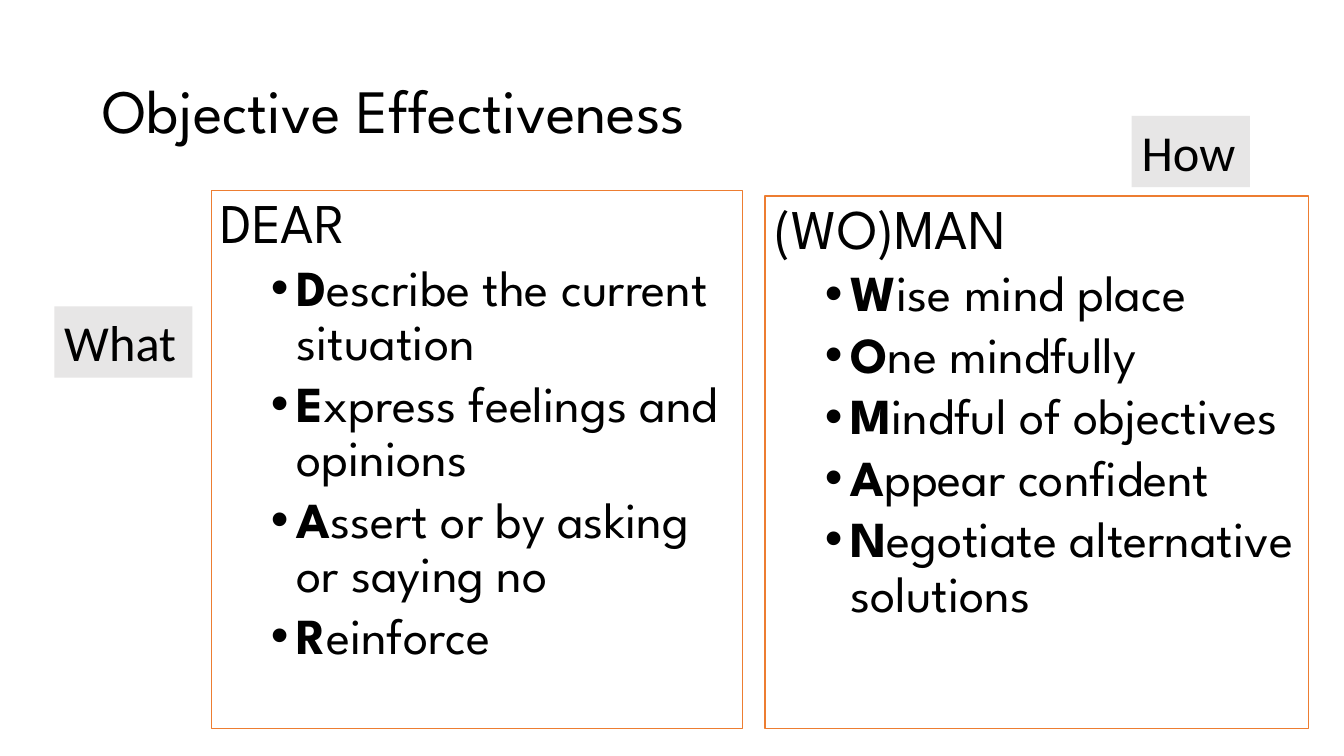
from lxml.etree import SubElement
from pptx import Presentation
from pptx.dml.color import RGBColor
from pptx.enum.shapes import MSO_SHAPE
from pptx.enum.text import MSO_ANCHOR, MSO_AUTO_SIZE, PP_ALIGN
from pptx.oxml.ns import qn
from pptx.util import Cm, Pt

BLACK = RGBColor(0x00, 0x00, 0x00)
ORANGE = RGBColor(0xED, 0x7D, 0x31)
LIGHT_GREY = RGBColor(0xE7, 0xE6, 0xE6)
HEADING_FONT = "League Spartan"
LABEL_FONT = "Calibri"

DEAR = [
    "Describe the current situation",
    "Express feelings and opinions",
    "Assert or by asking or saying no",
    "Reinforce",
]
WOMAN = [
    "Wise mind place",
    "One mindfully",
    "Mindful of objectives",
    "Appear confident",
    "Negotiate alternative solutions",
]


def style_paragraph(para, size, font_name, line_spacing=None, space_before=0):
    para.alignment = PP_ALIGN.LEFT
    para.line_spacing = line_spacing
    para.space_before = Pt(space_before)
    para.font.size = Pt(size)
    para.font.name = font_name
    para.font.color.rgb = BLACK


def add_bullet(para):
    properties = para._p.get_or_add_pPr()
    properties.set("marL", str(Cm(1.9)))
    properties.set("indent", str(Cm(-0.64)))
    bullet_font = SubElement(properties, qn("a:buFont"))
    bullet_font.set("typeface", "Arial")
    bullet = SubElement(properties, qn("a:buChar"))
    bullet.set("char", "•")


def add_rectangle(page, left, top, width, height):
    box = page.shapes.add_shape(
        MSO_SHAPE.RECTANGLE, Cm(left), Cm(top), Cm(width), Cm(height))
    box.shadow.inherit = False
    box.text_frame.word_wrap = True
    box.text_frame.vertical_anchor = MSO_ANCHOR.TOP
    return box


def add_title(page, text, left, top, width, height):
    box = page.shapes.add_textbox(Cm(left), Cm(top), Cm(width), Cm(height))
    box.text_frame.word_wrap = True
    box.text_frame.vertical_anchor = MSO_ANCHOR.MIDDLE
    para = box.text_frame.paragraphs[0]
    para.text = text
    style_paragraph(para, 44, HEADING_FONT, 0.9)


def add_acronym_panel(page, acronym, skills, left, top, width, height):
    box = add_rectangle(page, left, top, width, height)
    box.fill.background()
    box.line.color.rgb = ORANGE
    box.line.width = Pt(0.75)

    # Acronym heading
    heading = box.text_frame.paragraphs[0]
    heading.text = acronym
    style_paragraph(heading, 40, HEADING_FONT, 0.9, 10)

    # One skill for each letter, with its initial in bold
    for skill in skills:
        para = box.text_frame.add_paragraph()
        para.level = 1
        add_bullet(para)
        style_paragraph(para, 36, HEADING_FONT, 0.9, 5)
        for text, bold in ((skill[0], True), (skill[1:], False)):
            span = para.add_run()
            span.text = text
            span.font.bold = bold


def add_label(page, text, left, top, width, height):
    box = add_rectangle(page, left, top, width, height)
    box.fill.solid()
    box.fill.fore_color.rgb = LIGHT_GREY
    box.line.fill.background()
    box.text_frame.auto_size = MSO_AUTO_SIZE.SHAPE_TO_FIT_TEXT
    para = box.text_frame.paragraphs[0]
    para.text = text
    style_paragraph(para, 36, LABEL_FONT)


def main():
    deck = Presentation()
    deck.slide_width, deck.slide_height = Cm(33.87), Cm(19.05)
    page = deck.slides.add_slide(deck.slide_layouts[6])

    add_title(page, "Objective Effectiveness", 2.33, 1.01, 29.21, 3.68)

    # Skill panels
    add_acronym_panel(page, "DEAR", DEAR, 5.32, 4.8, 13.39, 13.56)
    add_acronym_panel(page, "(WO)MAN", WOMAN, 19.28, 4.94, 13.7, 13.43)

    # Panel labels
    add_label(page, "What", 1.37, 7.72, 3.48, 1.8)
    add_label(page, "How", 28.52, 2.92, 2.98, 1.8)

    deck.save("out.pptx")


if __name__ == "__main__":
    main()
